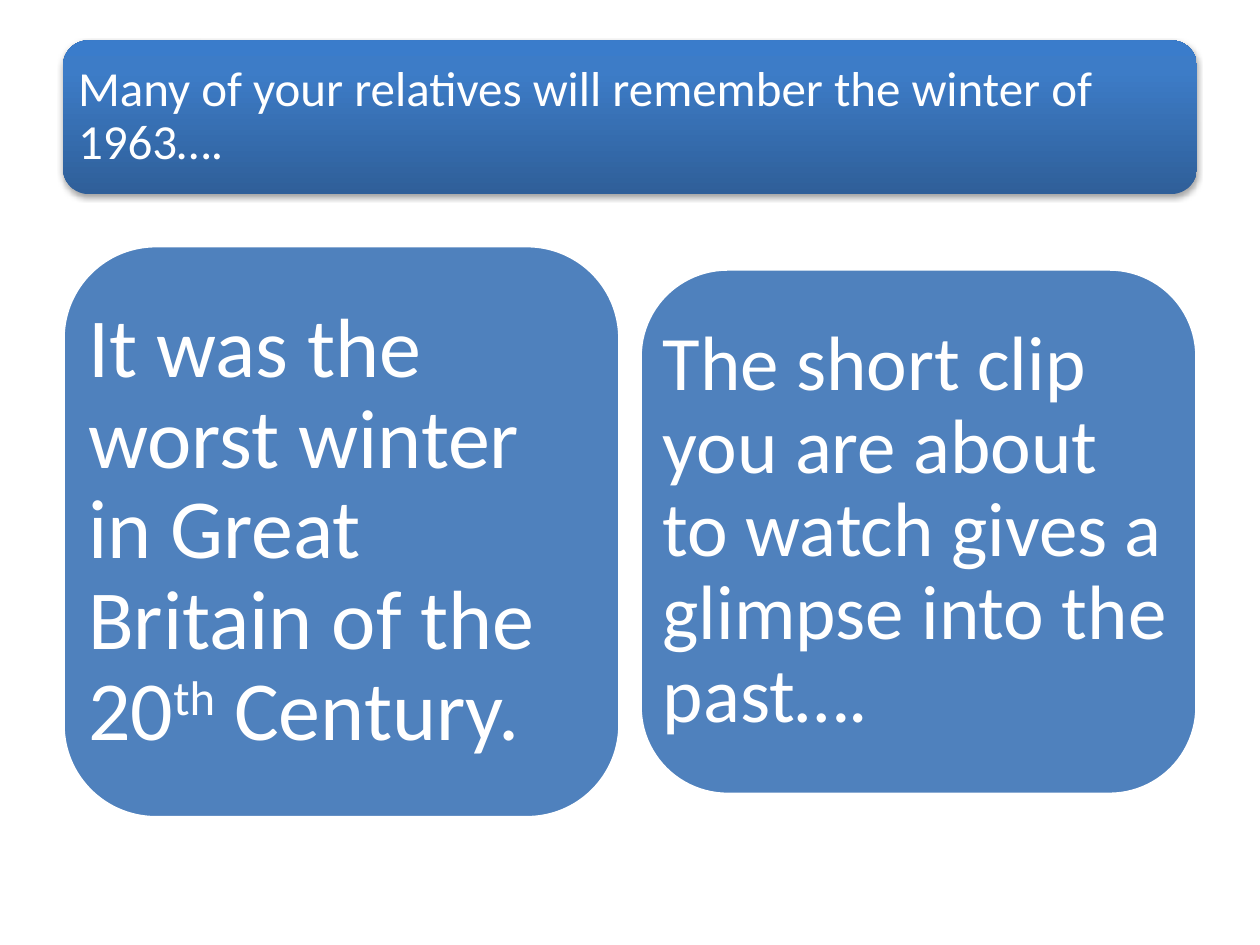
from copy import deepcopy

from lxml import etree
from pptx import Presentation
from pptx.dml.color import RGBColor
from pptx.enum import shapes, text
from pptx.oxml import ns
from pptx.util import Inches, Pt

TITLE = [("Many of your relatives will remember the winter of 1963….", False)]
PANELS = [
    dict(runs=[("It was the worst winter in Great Britain of the 20", False),
               ("th", True), (" Century.", False)],
         height=4.54, inset=0.2, size="left"),
    dict(runs=[("The short clip you are about to watch gives a glimpse into the past….", False)],
         height=4.17, inset=0.18, size="right"),
]
THEME = dict(
    font="Calibri", ink="FFFFFF", panel="4F81BD", shadow="000000",
    gradient=[(0, "2F5F99"), (0.8, "3D7CC7"), (1, "3A7CCB")],
    sizes=dict(title=28, left=48, right=44),
)
MARGIN, CONTENT_W = 0.5, 9
TITLE_TOP, TITLE_H = 0.32, 1.22
PANEL_W, PANEL_MID = 4.42, 4.22


def rgb(value):
    return RGBColor.from_string(value)


def add_text(parent, box, runs, *, size, inset):
    tf = parent.shapes.add_textbox(*box).text_frame
    tf.word_wrap = True
    tf.vertical_anchor = text.MSO_ANCHOR.MIDDLE
    tf.margin_left = tf.margin_top = tf.margin_right = tf.margin_bottom = Inches(inset)
    p = tf.paragraphs[0]
    p.line_spacing = 0.9
    for words, raised in runs:
        r = p.add_run()
        r.text = words
        r.font.name = THEME["font"]
        r.font.size = Pt(THEME["sizes"][size])
        r.font.color.rgb = rgb(THEME["ink"])
        if raised:
            r._r.get_or_add_rPr().set("baseline", "30000")


def add_card(slide, place, runs, *, size, inset):
    box = [Inches(v) for v in place]
    group = slide.shapes.add_group_shape()
    sp = group.shapes.add_shape(shapes.MSO_SHAPE.ROUNDED_RECTANGLE, *box)
    sp.shadow.inherit = False
    add_text(group, box, runs, size=size, inset=inset)
    return sp


def style_title(sp):
    sp.line.fill.background()
    sp.fill.gradient()
    sp.fill.gradient_angle = 90
    stops = sp._element.spPr.find(".//" + ns.qn("a:gsLst"))
    stops.append(deepcopy(stops[-1]))
    for stop, (position, color) in zip(sp.fill.gradient_stops, THEME["gradient"]):
        stop.position = position
        stop.color.rgb = rgb(color)
    effects = sp._element.spPr.find(ns.qn("a:effectLst"))
    shadow = etree.SubElement(effects, ns.qn("a:outerShdw"), blurRad=str(Pt(3.1)),
                              dist=str(Pt(1.8)), dir="5400000", rotWithShape="0")
    color = etree.SubElement(shadow, ns.qn("a:srgbClr"), val=THEME["shadow"])
    etree.SubElement(color, ns.qn("a:alpha"), val="35000")


def style_panel(sp):
    sp.fill.solid()
    sp.fill.fore_color.rgb = rgb(THEME["panel"])
    sp.line.color.rgb = rgb(THEME["ink"])
    sp.line.width = Pt(2)


def main():
    prs = Presentation()
    prs.slide_width, prs.slide_height = Inches(10), Inches(7.5)
    slide = prs.slides.add_slide(prs.slide_layouts[6])

    style_title(add_card(slide, (MARGIN, TITLE_TOP, CONTENT_W, TITLE_H), TITLE,
                         size="title", inset=0.12))
    for i, panel in enumerate(PANELS):
        left = MARGIN + i * (CONTENT_W - PANEL_W)
        top = PANEL_MID - panel["height"] / 2
        style_panel(add_card(slide, (left, top, PANEL_W, panel["height"]), panel["runs"],
                             size=panel["size"], inset=panel["inset"]))
    prs.save("out.pptx")


if __name__ == "__main__":
    main()
